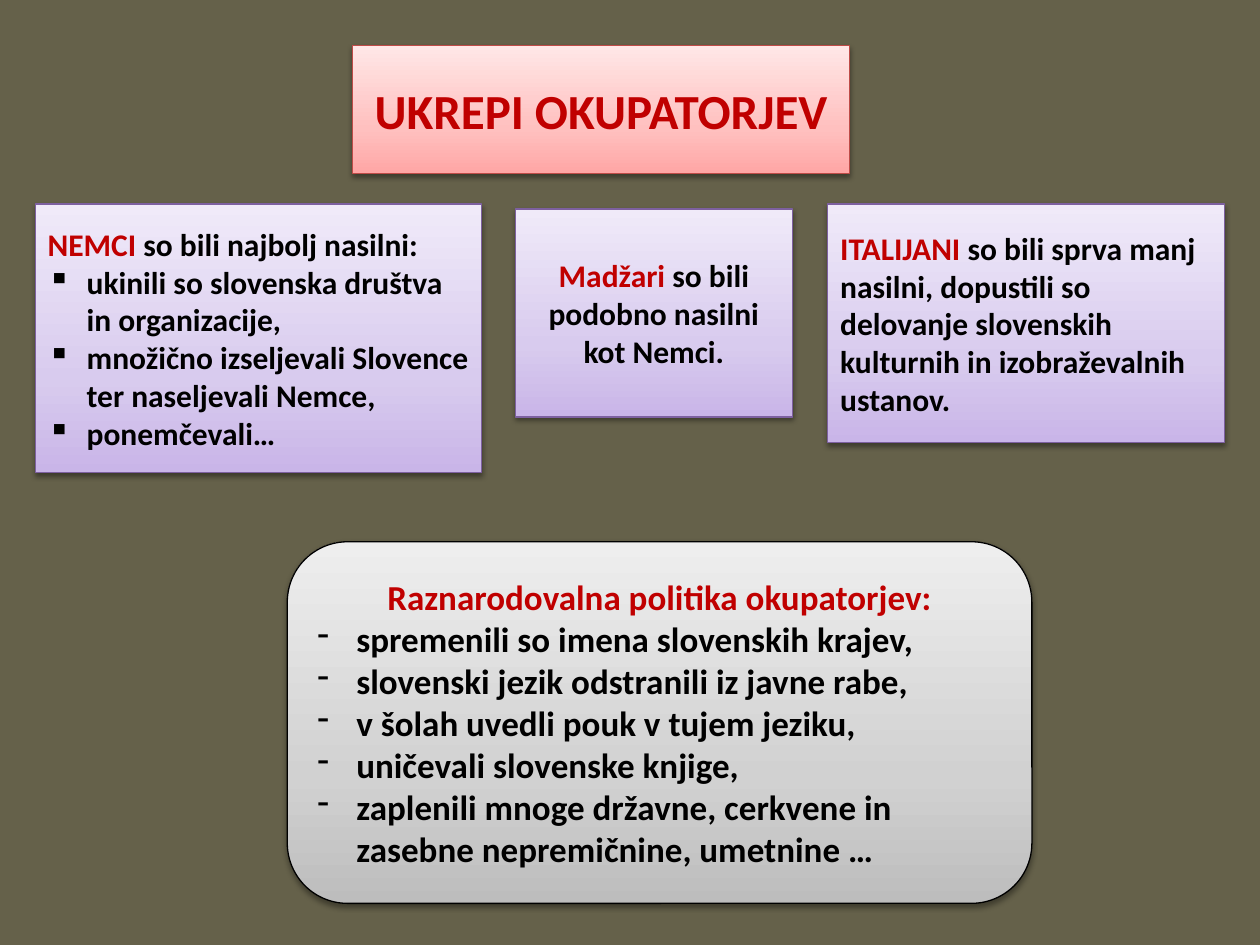
from copy import deepcopy

from lxml import etree
from pptx import Presentation
from pptx.dml.color import RGBColor
from pptx.enum.shapes import MSO_SHAPE
from pptx.enum.text import MSO_ANCHOR, PP_ALIGN
from pptx.oxml.ns import qn
from pptx.util import Inches, Pt

RECTANGLE = MSO_SHAPE.RECTANGLE
ROUNDED = MSO_SHAPE.ROUNDED_RECTANGLE
LEFT = PP_ALIGN.LEFT
CENTER = PP_ALIGN.CENTER
MIDDLE = MSO_ANCHOR.MIDDLE

OLIVE = RGBColor(0x65, 0x61, 0x4A)
RED = RGBColor(0xC0, 0x00, 0x00)
BLACK = RGBColor(0x00, 0x00, 0x00)
RED_EDGE = RGBColor(0xBF, 0x4C, 0x48)
PURPLE_EDGE = RGBColor(0x7D, 0x60, 0xA0)
RED_SHADES = (RGBColor(0xFF, 0xA6, 0xA5), RGBColor(0xFF, 0xC0, 0xBF), RGBColor(0xFF, 0xE7, 0xE7))
PURPLE_SHADES = (RGBColor(0xC9, 0xB5, 0xE8), RGBColor(0xD8, 0xCB, 0xEE), RGBColor(0xF0, 0xEA, 0xF9))
GREY_SHADES = (RGBColor(0xBD, 0xBD, 0xBD), RGBColor(0xD1, 0xD1, 0xD1), RGBColor(0xEE, 0xEE, 0xEE))

FONT = "Calibri"
HANG = Inches(0.31)


def fill_gradient(card, shades):
    card.fill.gradient()
    card.fill.gradient_angle = 90
    stop_list = card._element.spPr.find(qn("a:gradFill")).find(qn("a:gsLst"))
    stop_list.insert(1, deepcopy(stop_list[0]))
    for stop, position, shade in zip(card.fill.gradient_stops, (0, 0.35, 1), shades):
        stop.position = position
        stop.color.rgb = shade


def add_shadow(card):
    card.shadow.inherit = False
    effects = card._element.spPr.find(qn("a:effectLst"))
    shadow = etree.SubElement(effects, qn("a:outerShdw"), blurRad=str(Pt(3.1)),
                              dist=str(Pt(1.6)), dir="5400000", rotWithShape="0")
    tint = etree.SubElement(shadow, qn("a:srgbClr"), val="000000")
    etree.SubElement(tint, qn("a:alpha"), val="38000")


def add_card(slide, kind, left, top, width, height, shades, edge):
    card = slide.shapes.add_shape(kind, Inches(left), Inches(top), Inches(width), Inches(height))
    fill_gradient(card, shades)
    card.line.color.rgb = edge
    card.line.width = Pt(0.75)
    add_shadow(card)
    card.text_frame.word_wrap = True
    card.text_frame.vertical_anchor = MIDDLE
    return card.text_frame


def add_run(paragraph, text, size, color):
    run = paragraph.add_run()
    run.text = text
    run.font.name = FONT
    run.font.size = Pt(size)
    run.font.bold = True
    run.font.color.rgb = color


def write_heading(frame, size, align, highlight, rest=""):
    heading = frame.paragraphs[0]
    heading.alignment = align
    add_run(heading, highlight, size, RED)
    if rest:
        add_run(heading, rest, size, BLACK)


def add_bullets(frame, size, mark, items):
    for item in items:
        paragraph = frame.add_paragraph()
        paragraph.alignment = LEFT
        properties = paragraph._p.get_or_add_pPr()
        properties.set("marL", str(HANG))
        properties.set("indent", str(-HANG))
        etree.SubElement(properties, qn("a:buChar"), char=mark)
        add_run(paragraph, item, size, BLACK)


def main():
    deck = Presentation()
    deck.slide_width = Inches(10)
    deck.slide_height = Inches(7.5)
    slide = deck.slides.add_slide(deck.slide_layouts[6])
    slide.background.fill.solid()
    slide.background.fill.fore_color.rgb = OLIVE

    title = add_card(slide, RECTANGLE, 2.8, 0.36, 3.94, 1.02, RED_SHADES, RED_EDGE)
    write_heading(title, 28, CENTER, "UKREPI OKUPATORJEV")

    germans = add_card(slide, RECTANGLE, 0.28, 1.62, 3.54, 2.13, PURPLE_SHADES, PURPLE_EDGE)
    write_heading(germans, 18, LEFT, "NEMCI", " so bili najbolj nasilni:")
    add_bullets(germans, 18, "▪", (
        "ukinili so slovenska društva in organizacije,",
        "množično izseljevali Slovence ter naseljevali Nemce,",
        "ponemčevali…",
    ))

    italians = add_card(slide, RECTANGLE, 6.57, 1.62, 3.15, 1.89, PURPLE_SHADES, PURPLE_EDGE)
    write_heading(italians, 18, LEFT, "ITALIJANI",
                  " so bili sprva manj nasilni, dopustili so delovanje slovenskih "
                  "kulturnih in izobraževalnih ustanov.")

    hungarians = add_card(slide, RECTANGLE, 4.09, 1.66, 2.2, 1.65, PURPLE_SHADES, PURPLE_EDGE)
    write_heading(hungarians, 18, CENTER, "Madžari", " so bili podobno nasilni kot Nemci.")

    policy = add_card(slide, ROUNDED, 2.28, 4.3, 5.91, 2.87, GREY_SHADES, BLACK)
    write_heading(policy, 20, CENTER, "Raznarodovalna politika okupatorjev:")
    add_bullets(policy, 20, "-", (
        "spremenili so imena slovenskih krajev,",
        "slovenski jezik odstranili iz javne rabe,",
        "v šolah uvedli pouk v tujem jeziku,",
        "uničevali slovenske knjige,",
        "zaplenili mnoge državne, cerkvene in zasebne nepremičnine, umetnine …",
    ))

    deck.save("out.pptx")


if __name__ == "__main__":
    main()
